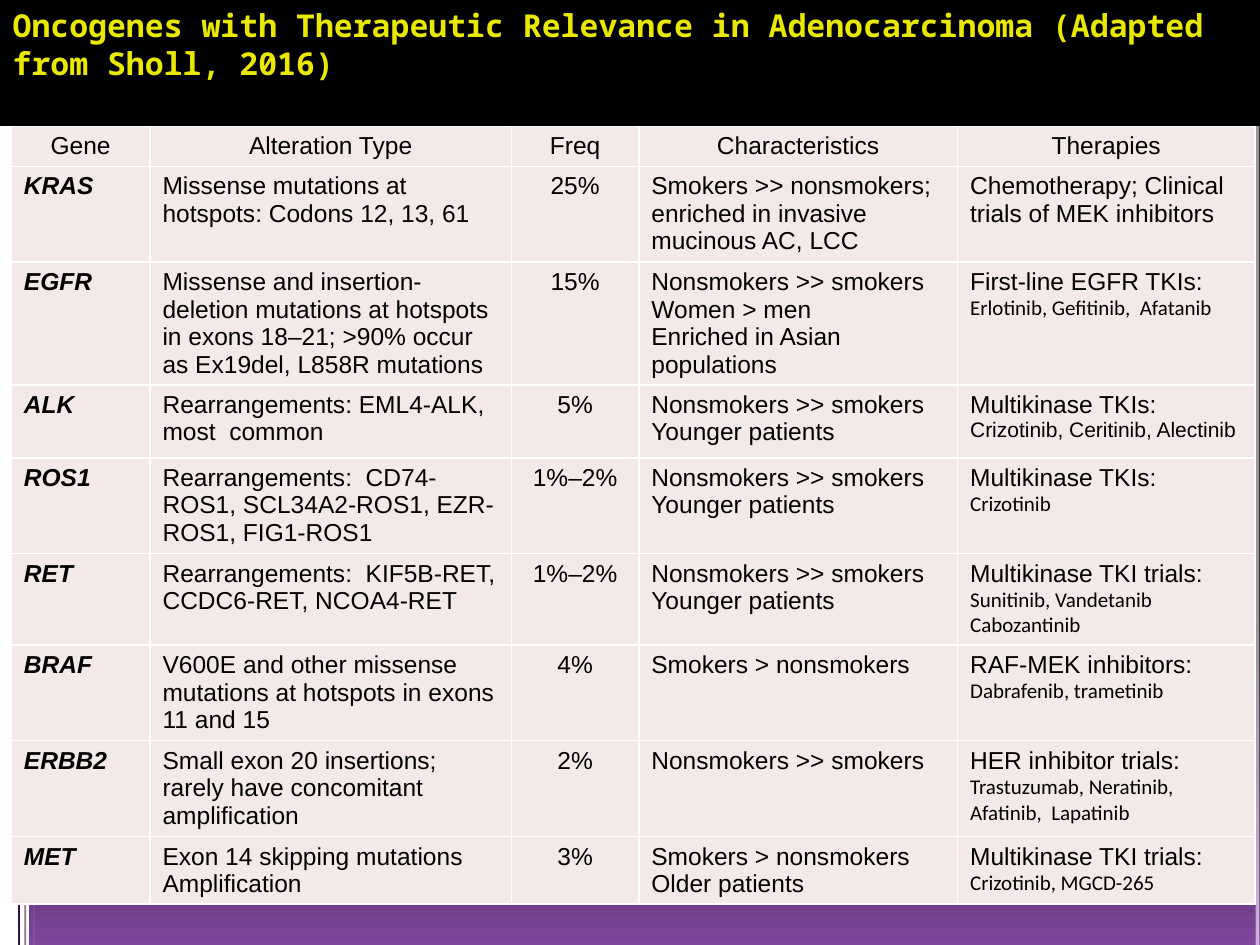
import pptx
import pptx.util
import pptx.dml.color
import pptx.enum.shapes
import pptx.enum.text
import pptx.oxml
import pptx.oxml.ns
from lxml import etree

COLORS = {"black": "000000", "white": "FFFFFF", "purple": "7F469C", "plum": "340F40",
          "cell": "F3E9E8", "yellow": "E8E800"}
W, H = 10, 7.5
TITLE_H = 1
COLS = [1.1, 2.87, 1.01, 2.53, 2.36]
ROWS = [0.32, 0.76, 0.97, 0.58, 0.76, 0.72, 0.76, 0.76, 0.53]
# x, colour, width in points, opacity in percent
STRIPES = [(0.15, "plum", 1, 100), (0.2, "plum", 1, 59),
           (0.27, "white", 0.25, 59), (9.98, "white", 2.25, 59)]
TITLE = "Oncogenes with Therapeutic Relevance in Adenocarcinoma (Adapted from Sholl, 2016)"
HEADER = ["Gene", "Alteration Type", "Freq", "Characteristics", "Therapies"]
YOUNGER = "Nonsmokers >> smokers\nYounger patients"
# gene, alteration, frequency, characteristics, therapy class, drugs
GENES = [
    ("KRAS", "Missense mutations at hotspots: Codons 12, 13, 61", "25%",
     "Smokers >> nonsmokers; enriched in invasive mucinous AC, LCC",
     "Chemotherapy; Clinical trials of MEK inhibitors", ""),
    ("EGFR", "Missense and insertion-deletion mutations at hotspots in exons 18–21; "
     ">90% occur as Ex19del, L858R mutations", "15%",
     "Nonsmokers >> smokers Women > men\nEnriched in Asian populations",
     "First-line EGFR TKIs:", "Erlotinib, Gefitinib,  Afatanib"),
    ("ALK", "Rearrangements: EML4-ALK, most  common", "5%", YOUNGER,
     "Multikinase TKIs:", "Crizotinib, Ceritinib, Alectinib"),
    ("ROS1", "Rearrangements:  CD74-ROS1, SCL34A2-ROS1, EZR-ROS1, FIG1-ROS1", "1%–2%",
     YOUNGER, "Multikinase TKIs:", "Crizotinib"),
    ("RET", "Rearrangements:  KIF5B-RET, CCDC6-RET, NCOA4-RET", "1%–2%", YOUNGER,
     "Multikinase TKI trials:", "Sunitinib, Vandetanib Cabozantinib"),
    ("BRAF", "V600E and other missense mutations at hotspots in exons 11 and 15", "4%",
     "Smokers > nonsmokers", "RAF-MEK inhibitors:", "Dabrafenib, trametinib"),
    ("ERBB2", "Small exon 20 insertions; rarely have concomitant amplification", "2%",
     "Nonsmokers >> smokers", "HER inhibitor trials:",
     "Trastuzumab, Neratinib, Afatinib,  Lapatinib"),
    ("MET", "Exon 14 skipping mutations\nAmplification", "3%",
     "Smokers > nonsmokers\nOlder patients", "Multikinase TKI trials:",
     "Crizotinib, MGCD-265"),
]


def rgb(name):
    return pptx.dml.color.RGBColor.from_string(COLORS[name])


def inches(*values):
    return [pptx.util.Inches(v) for v in values]


def fill_solid(obj, color):
    obj.fill.solid()
    obj.fill.fore_color.rgb = rgb(color)


def add_text(p, text, size=14, name="Arial", color="black", **style):
    """Add runs to a paragraph, with a line break at each newline."""
    for i, line in enumerate(text.split("\n")):
        if i:
            p.add_line_break()
        r = p.add_run()
        r.text = line
        for key, value in {"size": pptx.util.Pt(size), "name": name, **style}.items():
            setattr(r.font, key, value)
        r.font.color.rgb = rgb(color)


def add_background(s):
    fill = s.background.fill
    fill.gradient()
    fill.gradient_angle = 270
    for stop, position, color in zip(fill.gradient_stops, (0.65, 1), ("black", "purple")):
        stop.position = position
        stop.color.rgb = rgb(color)


def add_stripes(s, height):
    band = s.shapes.add_shape(pptx.enum.shapes.MSO_SHAPE.RECTANGLE,
                              *inches(0, 0, 0.23, height))
    band.shadow.inherit = False
    fill_solid(band, "white")
    band.line.fill.background()
    for x, color, width, opacity in STRIPES:
        line = s.shapes.add_connector(pptx.enum.shapes.MSO_CONNECTOR.STRAIGHT,
                                      *inches(x, 0, x, height))
        line.line.color.rgb = rgb(color)
        line.line.width = pptx.util.Pt(width)
        sp_pr = line._element.spPr
        if opacity < 100:
            clr = next(sp_pr.iter(pptx.oxml.ns.qn("a:srgbClr")))
            etree.SubElement(clr, pptx.oxml.ns.qn("a:alpha"), val=str(opacity * 1000))
        etree.SubElement(sp_pr, pptx.oxml.ns.qn("a:effectLst"))


def add_borders(cell):
    tc_pr = cell._tc.get_or_add_tcPr()
    for i, side in enumerate(("lnL", "lnR", "lnT", "lnB")):
        tc_pr.insert(i, pptx.oxml.parse_xml(
            f'<a:{side} {pptx.oxml.ns.nsdecls("a")} w="12700"><a:solidFill>'
            f'<a:srgbClr val="{COLORS["white"]}"/></a:solidFill></a:{side}>'))


def add_gene_table(s, left, top):
    frame = s.shapes.add_table(len(ROWS), len(COLS),
                               *inches(left, top, sum(COLS), sum(ROWS)))
    table = frame.table
    for col, width in zip(table.columns, COLS):
        col.width = pptx.util.Inches(width)
    for row, height in zip(table.rows, ROWS):
        row.height = pptx.util.Inches(height)
    for i, (*texts, drugs) in enumerate([(*HEADER, ""), *GENES]):
        for j, text in enumerate(texts):
            cell = table.cell(i, j)
            fill_solid(cell, "cell")
            add_borders(cell)
            p = cell.text_frame.paragraphs[0]
            if i == 0 or j == 2:
                p.alignment = pptx.enum.text.PP_ALIGN.CENTER
            is_gene = i > 0 and j == 0
            add_text(p, text, bold=is_gene, italic=is_gene)
        if drugs:
            p.add_line_break()
            add_text(p, drugs, 12, "Arial" if texts[0] == "ALK" else "Calibri",
                     bold=False, italic=False)


def place_title(s, left, top, width, height):
    title = s.shapes.title
    title.left, title.top, title.width, title.height = inches(left, top, width, height)
    fill_solid(title, "black")
    tf = title.text_frame
    for key, value in {"word_wrap": True, "auto_size": pptx.enum.text.MSO_AUTO_SIZE.NONE,
                       "vertical_anchor": pptx.enum.text.MSO_ANCHOR.TOP}.items():
        setattr(tf, key, value)
    p = tf.paragraphs[0]
    p.alignment = pptx.enum.text.PP_ALIGN.LEFT
    add_text(p, TITLE, 18, "Noto Sans Mono", "yellow", bold=True)
    s.shapes._spTree.append(title._element)  # in front of the stripes


def main():
    prs = pptx.Presentation()
    prs.slide_width, prs.slide_height = inches(W, H)
    s = prs.slides.add_slide(prs.slide_layouts[5])
    add_background(s)
    add_stripes(s, H)
    add_gene_table(s, 0.09, TITLE_H)
    place_title(s, 0, 0, W, TITLE_H)
    prs.save("out.pptx")


if __name__ == "__main__":
    main()
